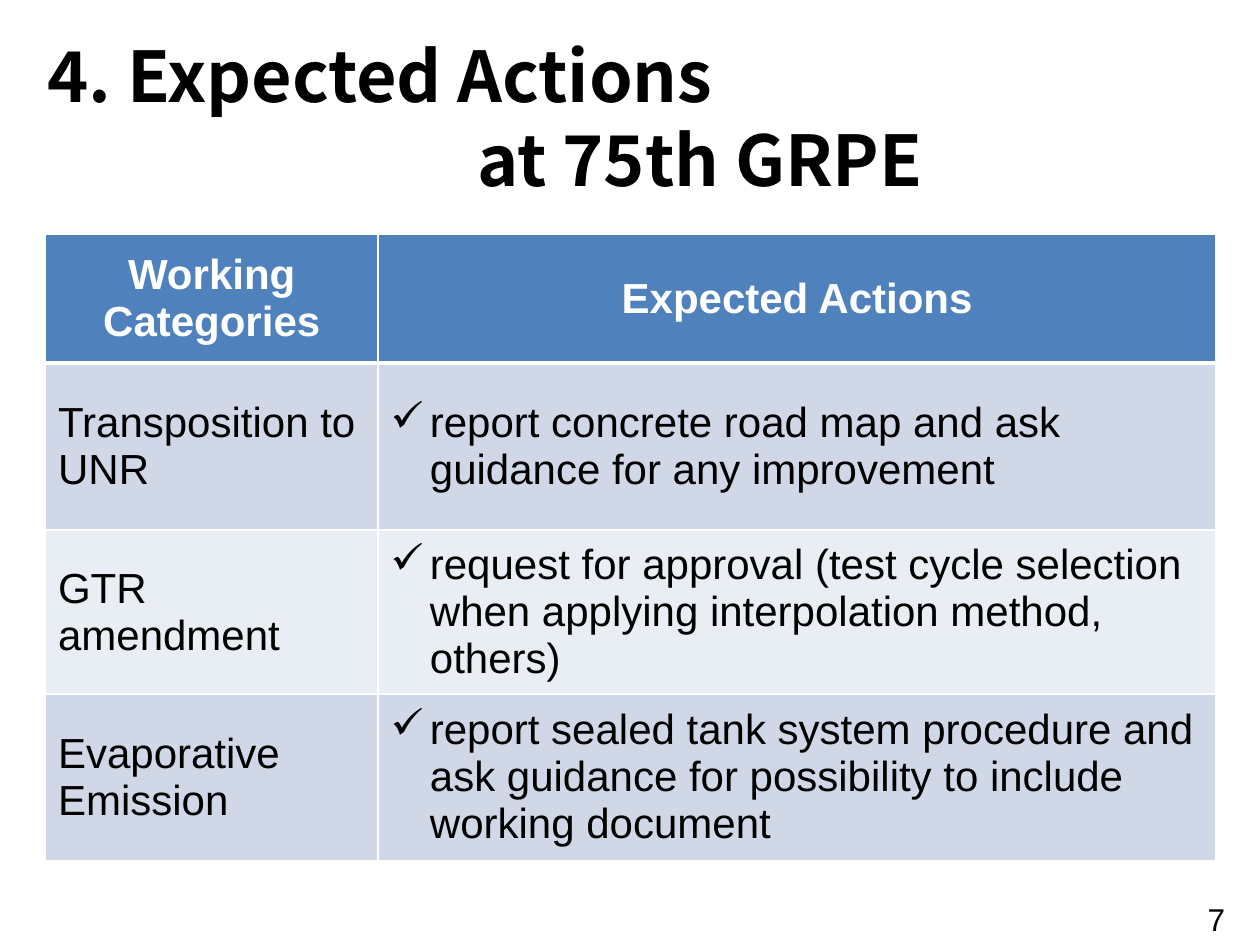
"""Builds the slide on expected actions at the 75th GRPE."""
from lxml.etree import SubElement
from pptx import Presentation
from pptx.dml.color import RGBColor
from pptx.enum.text import MSO_ANCHOR, PP_ALIGN
from pptx.oxml.ns import qn
from pptx.util import Pt

HEADINGS = ("Working\nCategories", "Expected Actions")
ACTIONS = (
    ("Transposition to UNR",
     "report concrete road map and ask guidance for any improvement"),
    ("GTR\namendment",
     "request for approval (test cycle selection when applying interpolation method, others)"),
    ("Evaporative Emission",
     "report sealed tank system procedure and ask guidance for possibility to include working document"),
)
COLUMN_WIDTHS = (190, 479)
ROW_HEIGHTS = (73.5, 95.5, 93.6, 95)


def color(value):
    return RGBColor.from_string(value)


class SlideBuilder:
    text_font, title_font = "Arial", "Noto Sans CJK JP"
    black, white, header = "000000", "FFFFFF", "4F81BD"
    bands = ("D0D8E8", "E9EDF4")

    def __init__(self, slide):
        self.slide = slide

    def style(self, paragraph, size, ink, bold=False, name=text_font):
        font = paragraph.font
        font.name, font.size, font.bold = name, Pt(size), bold
        font.color.rgb = color(ink)

    def indent(self, paragraph, margin, first):
        properties = paragraph._p.get_or_add_pPr()
        properties.set("marL", str(Pt(margin)))
        properties.set("indent", str(Pt(first)))
        return properties

    def title(self, lines, left, top, width, height, second_indent):
        title = self.slide.shapes.title
        title.left, title.top, title.width, title.height = map(Pt, (left, top, width, height))
        frame = title.text_frame
        frame.text = "\n".join(lines)
        frame.vertical_anchor = MSO_ANCHOR.TOP
        for paragraph in frame.paragraphs:
            self.style(paragraph, 40, self.black, True, self.title_font)
            paragraph.alignment = PP_ALIGN.LEFT
            paragraph.line_spacing = Pt(48)
        self.indent(frame.paragraphs[1], second_indent, 0)

    def page_number(self, number, left, top, width, height):
        box = self.slide.shapes.add_textbox(*map(Pt, (left, top, width, height)))
        frame = box.text_frame
        frame.text = number
        frame.word_wrap = False
        self.style(frame.paragraphs[0], 18, self.black)

    def borders(self, cell, bottom):
        properties = cell._tc.get_or_add_tcPr()
        for position, (side, weight) in enumerate(
                (("lnL", 1), ("lnR", 1), ("lnT", 1), ("lnB", bottom))):
            line = SubElement(properties, qn(f"a:{side}"), w=str(Pt(weight)))
            fill = SubElement(line, qn("a:solidFill"))
            SubElement(fill, qn("a:srgbClr"), val=self.white)
            properties.insert(position, line)

    def cell(self, cell, text, fill, heading=False, checked=False):
        cell.text = text
        cell.vertical_anchor = MSO_ANCHOR.MIDDLE
        cell.fill.solid()
        cell.fill.fore_color.rgb = color(fill)
        self.borders(cell, 3 if heading else 1)
        for paragraph in cell.text_frame.paragraphs:
            self.style(paragraph, 24, self.white if heading else self.black, heading)
            paragraph.alignment = PP_ALIGN.CENTER if heading else PP_ALIGN.LEFT
            if checked:
                properties = self.indent(paragraph, 22.5, -22.5)
                bullet = SubElement(properties, qn("a:buChar"), char="✓")
                properties.insert(0, bullet)

    def table(self, headings, rows, left, top, widths, heights):
        table = self.slide.shapes.add_table(
            len(heights), len(widths), Pt(left), Pt(top),
            Pt(sum(widths)), Pt(sum(heights))).table
        for column, width in zip(table.columns, widths):
            column.width = Pt(width)
        for row, height in zip(table.rows, heights):
            row.height = Pt(height)
        for index, heading in enumerate(headings):
            self.cell(table.cell(0, index), heading, self.header, heading=True)
        for index, (category, action) in enumerate(rows):
            band = self.bands[index % 2]
            self.cell(table.cell(index + 1, 0), category, band)
            self.cell(table.cell(index + 1, 1), action, band, checked=True)


def main():
    deck = Presentation()
    deck.slide_width, deck.slide_height = Pt(720), Pt(540)
    builder = SlideBuilder(deck.slides.add_slide(deck.slide_layouts[5]))
    builder.page_number("7", 683, 511, 37, 29)
    builder.title(("4. Expected Actions", "at 75th GRPE"), 20, 15, 662, 104.5, 245.5)
    builder.table(HEADINGS, ACTIONS, 26, 134, COLUMN_WIDTHS, ROW_HEIGHTS)
    deck.save("out.pptx")


if __name__ == "__main__":
    main()
